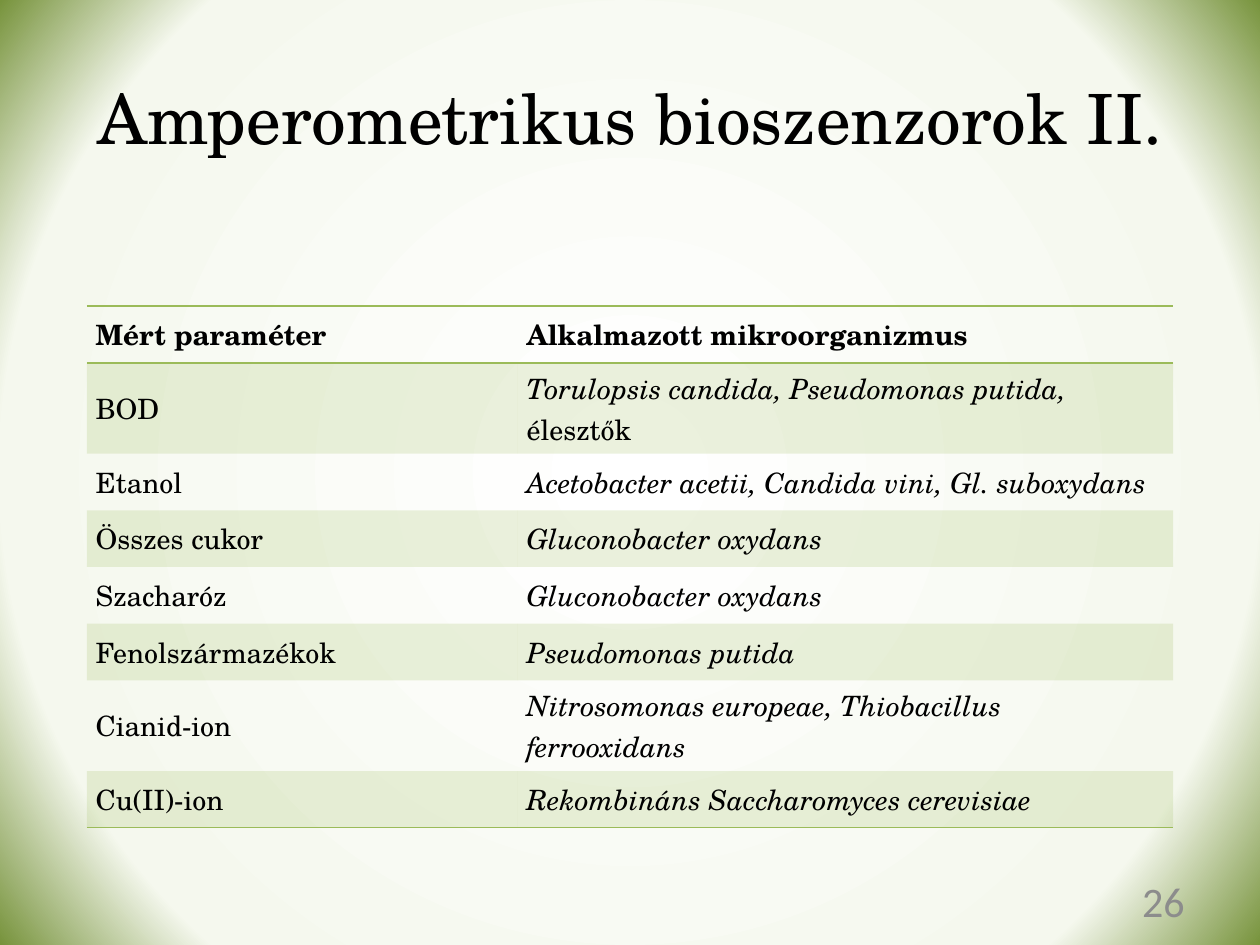
from lxml import etree
from pptx import Presentation
from pptx.dml.color import RGBColor
from pptx.enum.text import MSO_ANCHOR, PP_ALIGN
from pptx.oxml import parse_xml
from pptx.oxml.ns import qn
from pptx.util import Inches, Pt

TITLE = "Amperometrikus bioszenzorok II."
PAGE = "26"
HEAD = ["Mért paraméter", "Alkalmazott mikroorganizmus"]
# parameter, species in italics, plain ending, lines of text
ROWS = [
    ("BOD", "Torulopsis candida, Pseudomonas putida, ", "élesztők", 2),
    ("Etanol", "Acetobacter acetii, Candida vini, Gl. suboxydans", "", 1),
    ("Összes cukor", "Gluconobacter oxydans", "", 1),
    ("Szacharóz", "Gluconobacter oxydans", "", 1),
    ("Fenolszármazékok", "Pseudomonas putida", "", 1),
    ("Cianid-ion", "Nitrosomonas europeae, Thiobacillus ferrooxidans", "", 2),
    ("Cu(II)-ion", "Rekombináns Saccharomyces cerevisiae", "", 1),
]
COLS = [3.42, 5.2]
ROW_H = {1: 0.45, 2: 0.72}  # height by lines of text
COLORS = {"text": "000000", "page": "8C8C8C", "green": "9BBB59"}
GLOW = [(0, "FFFFFF"), (80, "F5F8EE"), (100, "77933C")]
SERIF = "TeX Gyre Schola"
NS = 'xmlns:a="http://schemas.openxmlformats.org/drawingml/2006/main"'
NO_STYLE = "{2D5ABB26-0587-4C30-8999-92F81FD0307C}"


def write(para, words, size=16, font=SERIF, color="text", bold=False, italic=False):
    run = para.add_run()
    run.text = words
    f = run.font
    f.size, f.name, f.bold, f.italic = Pt(size), font, bold, italic
    f.color.rgb = RGBColor.from_string(COLORS[color])


def label(slide, box, words, align, **style):
    frame = slide.shapes.add_textbox(*map(Inches, box)).text_frame
    frame.word_wrap = True
    frame.vertical_anchor = MSO_ANCHOR.MIDDLE
    frame.paragraphs[0].alignment = align
    write(frame.paragraphs[0], words, **style)


def glow(slide):
    fill = slide.background.fill
    fill.solid()
    stops = "".join(f'<a:gs pos="{pos * 1000}"><a:srgbClr val="{c}"/></a:gs>'
                    for pos, c in GLOW)
    grad = parse_xml(
        f'<a:gradFill {NS} rotWithShape="1"><a:gsLst>{stops}</a:gsLst>'
        '<a:path path="circle"><a:fillToRect l="50000" t="50000" r="50000" b="50000"/>'
        '</a:path></a:gradFill>')
    old = next(slide.element.iter(qn("a:solidFill")))
    old.getparent().replace(old, grad)


def tint(cell):
    cell.fill.solid()
    cell.fill.fore_color.rgb = RGBColor.from_string(COLORS["green"])
    color = next(cell._tc.tcPr.iter(qn("a:srgbClr")))
    etree.SubElement(color, qn("a:alpha"), val="20000")


def border(cell, sides):
    for i, side in enumerate(sides):
        line = parse_xml(
            f'<a:ln{side} {NS} w="12700"><a:solidFill>'
            f'<a:srgbClr val="{COLORS["green"]}"/></a:solidFill></a:ln{side}>')
        cell._tc.get_or_add_tcPr().insert(i, line)


prs = Presentation()
prs.slide_width, prs.slide_height = Inches(10), Inches(7.5)
slide = prs.slides.add_slide(prs.slide_layouts[6])
glow(slide)

# Title
label(slide, (0.5, 0.3, 9, 1.25), TITLE, PP_ALIGN.CENTER, size=39.6)

# Table: each cell is a list of (words, style)
grid = [[[(h, {"bold": True})] for h in HEAD]]
highs = [ROW_H[1]]
for name, species, rest, lines in ROWS:
    runs = [(species, {"italic": True})] + ([(rest, {})] if rest else [])
    grid.append([[(name, {})], runs])
    highs.append(ROW_H[lines])

table = slide.shapes.add_table(
    len(grid), len(COLS), Inches(0.69), Inches(2.43),
    Inches(sum(COLS)), Inches(sum(highs))).table
table._tbl.tblPr.find(qn("a:tableStyleId")).text = NO_STYLE
for col, width in zip(table.columns, COLS):
    col.width = Inches(width)

for r, row in enumerate(grid):
    table.rows[r].height = Inches(highs[r])
    for c, runs in enumerate(row):
        cell = table.cell(r, c)
        cell.vertical_anchor = MSO_ANCHOR.MIDDLE
        cell.margin_left = cell.margin_right = Inches(0.07)
        cell.margin_top = cell.margin_bottom = Inches(0.04)
        for words, style in runs:
            write(cell.text_frame.paragraphs[0], words, **style)
        if r % 2:
            tint(cell)
        else:
            cell.fill.background()
        if r == 0:
            border(cell, "TB")
        elif r == len(grid) - 1:
            border(cell, "B")

# Page number
label(slide, (7.17, 6.95, 2.33, 0.4), PAGE, PP_ALIGN.RIGHT,
      size=24, font="Calibri", color="page")

prs.save("out.pptx")
